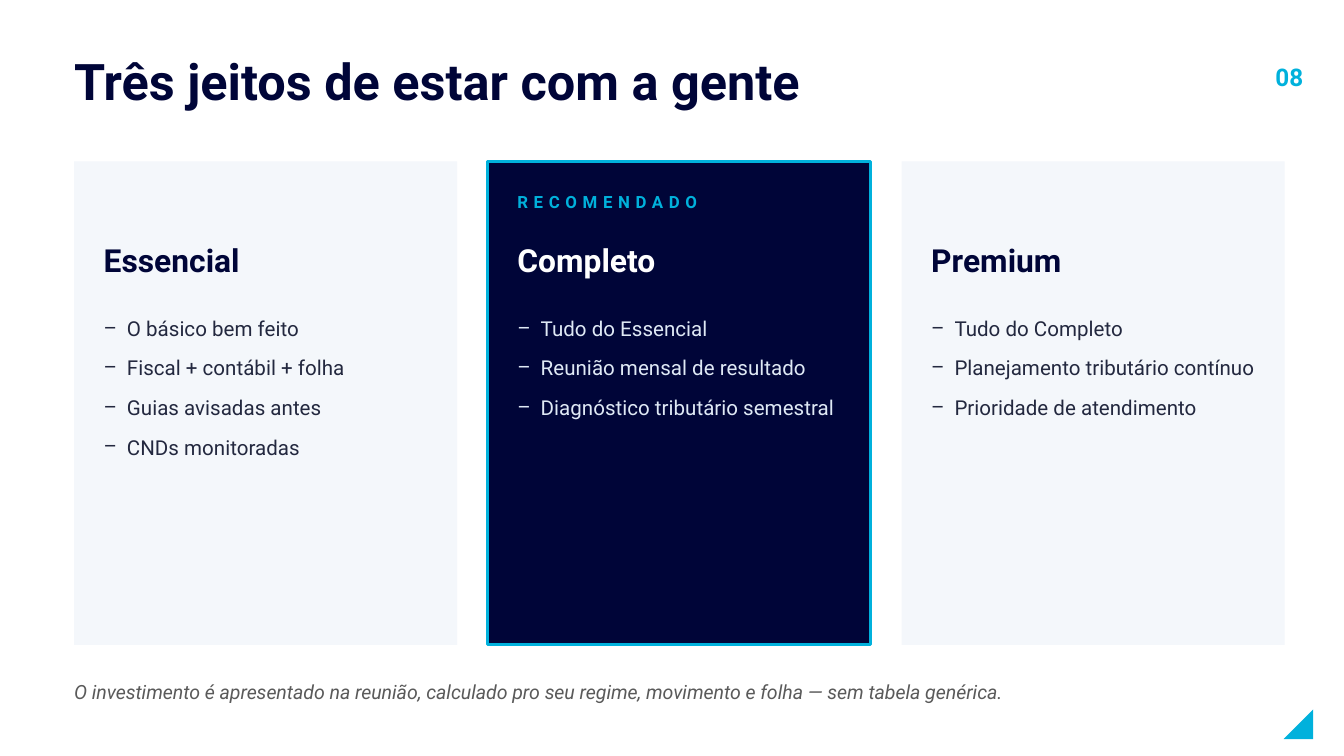
from pptx import Presentation
from pptx.dml.color import RGBColor
from pptx.enum.shapes import MSO_SHAPE
from pptx.enum.text import MSO_ANCHOR, MSO_AUTO_SIZE, PP_ALIGN
from pptx.oxml.ns import qn
from pptx.util import Cm, Pt
from lxml.etree import SubElement

NAVY = RGBColor(0x00, 0x05, 0x38)
CYAN = RGBColor(0x00, 0xB1, 0xDC)
WHITE = RGBColor(0xFF, 0xFF, 0xFF)
PALE = RGBColor(0xF4, 0xF7, 0xFB)
INK = RGBColor(0x23, 0x28, 0x3F)
ICE = RGBColor(0xDF, 0xE9, 0xF5)
GRAY = RGBColor(0x5A, 0x5A, 0x5A)

# Card grid, in centimetres
MARGIN, CARD_TOP = 1.4, 3.05
CARD_WIDTH, CARD_HEIGHT = 7.24, 9.14
CARD_PITCH, CARD_PADDING = 7.82, 0.56

PLANS = [
    ("Essencial", None, ["O básico bem feito", "Fiscal + contábil + folha",
                         "Guias avisadas antes", "CNDs monitoradas"]),
    ("Completo", "RECOMENDADO", ["Tudo do Essencial", "Reunião mensal de resultado",
                                 "Diagnóstico tributário semestral"]),
    ("Premium", None, ["Tudo do Completo", "Planejamento tributário contínuo",
                       "Prioridade de atendimento"]),
]


class SlideBuilder:
    font_name = "Roboto"

    def __init__(self, slide):
        self.slide = slide

    def prepare_frame(self, shape, anchor):
        frame = shape.text_frame
        frame.word_wrap = True
        frame.auto_size = MSO_AUTO_SIZE.NONE
        frame.vertical_anchor = anchor
        frame.margin_left = frame.margin_top = 0
        frame.margin_right = frame.margin_bottom = 0
        return frame

    def add_run(self, paragraph, text, size, color, bold=False, italic=False, spacing=0):
        run = paragraph.add_run()
        run.text = text
        font = run.font
        font.name, font.size = self.font_name, Pt(size)
        font.bold, font.italic = bold, italic
        font.color.rgb = color
        if spacing:
            run._r.get_or_add_rPr().set("spc", str(spacing * 100))

    def add_box(self, left, top, width, height):
        return self.slide.shapes.add_textbox(Cm(left), Cm(top), Cm(width), Cm(height))

    def set_title(self, text, left, top, width, height):
        title = self.slide.shapes.title
        title.left, title.top = Cm(left), Cm(top)
        title.width, title.height = Cm(width), Cm(height)
        paragraph = self.prepare_frame(title, MSO_ANCHOR.MIDDLE).paragraphs[0]
        paragraph.alignment = PP_ALIGN.LEFT
        self.add_run(paragraph, text, 27, NAVY, bold=True)

    def add_text(self, text, left, top, width, height, size, color,
                 alignment=PP_ALIGN.LEFT, **style):
        box = self.add_box(left, top, width, height)
        paragraph = self.prepare_frame(box, MSO_ANCHOR.MIDDLE).paragraphs[0]
        paragraph.alignment = alignment
        self.add_run(paragraph, text, size, color, **style)

    def add_list(self, items, left, top, width, height, color):
        frame = self.prepare_frame(self.add_box(left, top, width, height), MSO_ANCHOR.TOP)
        for index, item in enumerate(items):
            paragraph = frame.add_paragraph() if index else frame.paragraphs[0]
            paragraph.space_after = Pt(8)
            properties = paragraph._p.get_or_add_pPr()
            properties.set("marL", str(Cm(0.44)))
            properties.set("indent", str(-Cm(0.44)))
            SubElement(properties, qn("a:buFont")).set("typeface", self.font_name)
            SubElement(properties, qn("a:buChar")).set("char", "–")
            self.add_run(paragraph, item, 11, color)

    def add_shape(self, kind, left, top, width, height, fill, line=None):
        shape = self.slide.shapes.add_shape(kind, Cm(left), Cm(top), Cm(width), Cm(height))
        shape.shadow.inherit = False
        shape.fill.solid()
        shape.fill.fore_color.rgb = fill
        if line is None:
            shape.line.fill.background()
        else:
            shape.line.color.rgb = line
            shape.line.width = Pt(1.5)
        return shape

    def add_plan(self, left, name, label, items):
        featured = label is not None
        text_left = left + CARD_PADDING
        self.add_shape(MSO_SHAPE.RECTANGLE, left, CARD_TOP, CARD_WIDTH, CARD_HEIGHT,
                       NAVY if featured else PALE, CYAN if featured else None)
        if featured:
            self.add_text(label, text_left, 3.43, 6.1, 0.76, 9, CYAN, bold=True, spacing=3)
        self.add_text(name, text_left, 4.27, 6.1, 1.27, 17,
                      WHITE if featured else NAVY, bold=True)
        self.add_list(items, text_left, 5.97, 6.22, 5.84, ICE if featured else INK)


def main():
    presentation = Presentation()
    presentation.slide_width, presentation.slide_height = Cm(25.4), Cm(14.29)
    slide = presentation.slides.add_slide(presentation.slide_layouts[5])
    slide.background.fill.solid()
    slide.background.fill.fore_color.rgb = WHITE
    builder = SlideBuilder(slide)

    # Title, page number and corner mark
    builder.set_title("Três jeitos de estar com a gente", MARGIN, 0.76, 21.34, 1.52)
    builder.add_text("08", 23.11, 0.81, 1.52, 1.27, 13, CYAN, PP_ALIGN.RIGHT, bold=True)
    corner = builder.add_shape(MSO_SHAPE.RIGHT_TRIANGLE, 24.26, 13.41, 0.56, 0.56, CYAN)
    corner._element.spPr.find(qn("a:xfrm")).set("flipH", "1")

    # Plan cards
    for index, (name, label, items) in enumerate(PLANS):
        builder.add_plan(MARGIN + index * CARD_PITCH, name, label, items)

    # Closing note
    builder.add_text("O investimento é apresentado na reunião, calculado pro seu regime, "
                     "movimento e folha — sem tabela genérica.",
                     MARGIN, 12.57, 22.61, 1.02, 10.5, GRAY, italic=True)

    presentation.save("out.pptx")


if __name__ == "__main__":
    main()
